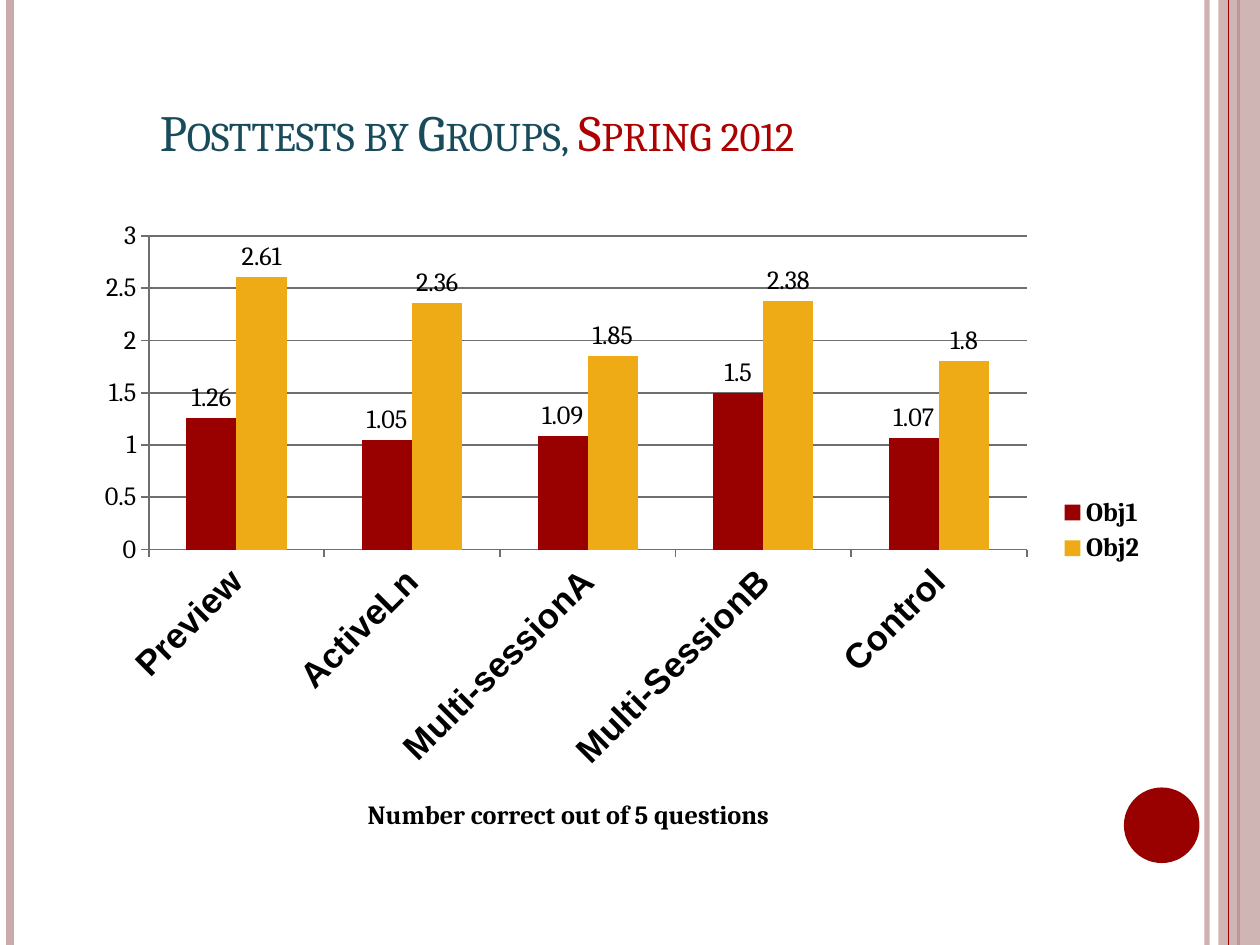
from lxml import etree
from pptx import Presentation
from pptx.chart.data import CategoryChartData
from pptx.dml.color import RGBColor
from pptx.enum.chart import XL_CHART_TYPE as ChartType, XL_LABEL_POSITION as LabelPosition
from pptx.enum.chart import XL_LEGEND_POSITION as LegendPosition, XL_TICK_MARK as TickMark
from pptx.enum.shapes import MSO_CONNECTOR as Connector, MSO_SHAPE as Shape
from pptx.enum.text import MSO_ANCHOR as Anchor
from pptx.oxml.ns import qn
from pptx.util import Inches, Pt

# Content
TITLE = [("Posttests by Groups, ", "184B5B"), ("Spring 2012", "AD0000")]
AXIS_TITLE = "Number correct out of 5 questions"
CATEGORIES = ["Preview", "ActiveLn", "Multi-sessionA", "Multi-SessionB", "Control"]
SERIES = [
    ("Obj1", [1.26, 1.05, 1.09, 1.5, 1.07], "990000"),
    ("Obj2", [2.61, 2.36, 1.85, 2.38, 1.8], "EFAB16"),
]
ROSE, RED, GREY = "CAABAB", "990000", "6F6F6F"
# Vertical rules: x, colour, width in points, opacity in percent
RULES_BEHIND = [(9.58, ROSE, 3, 93), (0.08, ROSE, 4.5, 100), (9.83, RED, 1.5, 100)]
RULES_FRONT = [(9.75, RED, 0.75, 100)]

presentation = Presentation()
presentation.slide_width, presentation.slide_height = Inches(10), Inches(7.5)
slide = presentation.slides.add_slide(presentation.slide_layouts[6])


def rgb(color):
    return RGBColor.from_string(color)


def set_opacity(shape, percent):
    for color in shape._element.spPr.iter(qn("a:srgbClr")):
        etree.SubElement(color, qn("a:alpha")).set("val", str(percent * 1000))


def add_rules(rules):
    for x, color, width, opacity in rules:
        rule = slide.shapes.add_connector(
            Connector.STRAIGHT, Inches(x), 0, Inches(x), presentation.slide_height)
        rule.line.color.rgb = rgb(color)
        rule.line.width = Pt(width)
        if opacity < 100:
            set_opacity(rule, opacity)
        etree.SubElement(rule._element.spPr, qn("a:effectLst"))


def add_filled(kind, box, color):
    shape = slide.shapes.add_shape(kind, *map(Inches, box))
    shape.shadow.inherit = False
    shape.fill.solid()
    shape.fill.fore_color.rgb = rgb(color)
    shape.line.fill.background()
    return shape


def set_layout(element, index, inner=False, **place):
    """Place a chart part by fractions of the chart area."""
    for old in element.findall(qn("c:layout")):
        element.remove(old)
    layout = etree.Element(qn("c:layout"))
    manual = etree.SubElement(layout, qn("c:manualLayout"))
    values = {"layoutTarget": "inner"} if inner else {}
    values.update(xMode="edge", yMode="edge", **place)
    for name, value in values.items():
        etree.SubElement(manual, qn(f"c:{name}")).set("val", str(value))
    element.insert(index, layout)


def set_font(font, size, name="Cambria", bold=False):
    font.size, font.name, font.bold = Pt(size), name, bold
    font.color.rgb = rgb("000000")


# Side decoration
add_rules(RULES_BEHIND)
set_opacity(add_filled(Shape.RECTANGLE, (9.67, 0, 0.33, 7.5), ROSE), 87)
add_rules(RULES_FRONT)
add_filled(Shape.OVAL, (8.92, 6.25, 0.6, 0.6), RED)

# Title
title_frame = slide.shapes.add_textbox(*map(Inches, (1.17, 0.25, 9.33, 1.08))).text_frame
title_frame.word_wrap = True
title_frame.vertical_anchor = Anchor.BOTTOM
for text, color in TITLE:
    run = title_frame.paragraphs[0].add_run()
    run.text = text
    run.font.size, run.font.name = Pt(29), "Cambria"
    run.font.color.rgb = rgb(color)
    run._r.get_or_add_rPr().set("cap", "small")

# Chart
chart_data = CategoryChartData()
chart_data.categories = CATEGORIES
for name, values, _ in SERIES:
    chart_data.add_series(name, values)
chart = slide.shapes.add_chart(
    ChartType.COLUMN_CLUSTERED, *map(Inches, (0.67, 1.67, 8.5, 5.08)), chart_data).chart
chart.has_title = False
set_font(chart.font, 15)
set_layout(chart.plots[0]._element.getparent(), 0, inner=True, x=0.06, y=0.04, w=0.82, h=0.49)

plot = chart.plots[0]
plot.gap_width, plot.overlap = 150, 0
plot.vary_by_categories = False
for series, (_, _, color) in zip(plot.series, SERIES):
    series.format.fill.solid()
    series.format.fill.fore_color.rgb = rgb(color)
    series.invert_if_negative = False
    series.data_labels.show_value = True
    series.data_labels.position = LabelPosition.OUTSIDE_END
    set_font(series.data_labels.font, 15)

# Axes
category_axis, value_axis = chart.category_axis, chart.value_axis
value_axis.minimum_scale, value_axis.maximum_scale, value_axis.major_unit = 0, 3, 0.5
value_axis.has_major_gridlines = True
for axis in (category_axis, value_axis):
    axis.major_tick_mark = TickMark.OUTSIDE
for line_format in (category_axis.format, value_axis.format, value_axis.major_gridlines.format):
    line_format.line.color.rgb = rgb(GREY)
    line_format.line.width = Pt(1)
set_font(value_axis.tick_labels.font, 15)
set_font(category_axis.tick_labels.font, 20, "Arial", bold=True)
label_body = category_axis._element.find(qn("c:txPr")).find(qn("a:bodyPr"))
label_body.set("rot", str(-45 * 60000))
label_body.set("vert", "horz")

axis_title = category_axis.axis_title
axis_title.text_frame.text = AXIS_TITLE
set_font(axis_title.text_frame.paragraphs[0].runs[0].font, 15, bold=True)
set_layout(axis_title._element, 1, x=0.26, y=0.91)

# Legend
chart.has_legend = True
legend = chart.legend
legend.position = LegendPosition.RIGHT
legend.include_in_layout = False
set_font(legend.font, 15, bold=True)
set_layout(legend._element, 1, x=0.9, y=0.44, w=0.1, h=0.12)

presentation.save("out.pptx")
